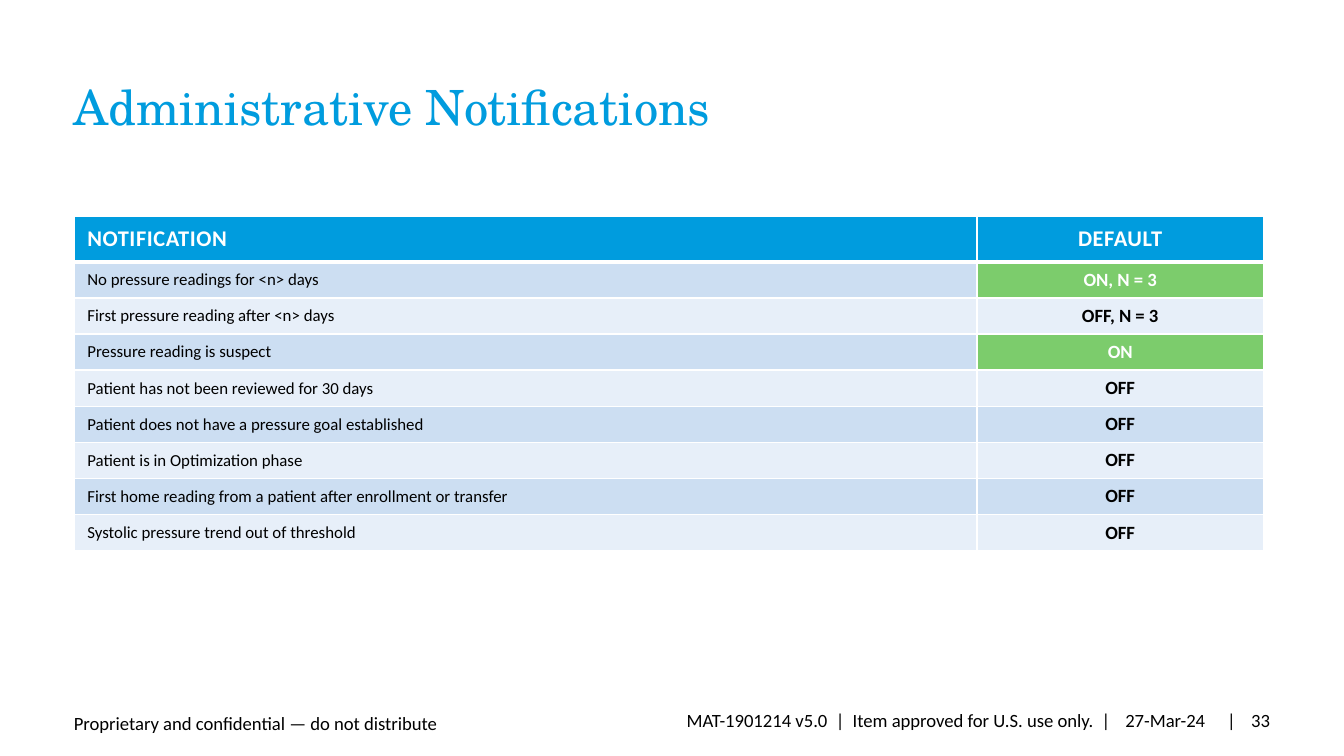
from lxml import etree
from pptx import Presentation
from pptx.dml.color import RGBColor
from pptx.enum.text import MSO_ANCHOR, PP_ALIGN
from pptx.oxml.ns import qn
from pptx.util import Inches, Pt

LEFT, CENTER, RIGHT = PP_ALIGN.LEFT, PP_ALIGN.CENTER, PP_ALIGN.RIGHT
TOP, MIDDLE, BOTTOM = MSO_ANCHOR.TOP, MSO_ANCHOR.MIDDLE, MSO_ANCHOR.BOTTOM
BODY_FONT, TITLE_FONT = "Calibri", "TeX Gyre Schola"
COLORS = {
    "blue": "009CDE",
    "green": "7CCC6C",
    "band_dark": "CCDEF2",
    "band_light": "E7EFF9",
    "white": "FFFFFF",
    "black": "000000",
}


def style_text(frame, text, size, color, align=LEFT, bold=False, font=BODY_FONT):
    paragraph = frame.paragraphs[0]
    paragraph.text = text
    paragraph.alignment = align
    for run in paragraph.runs:
        run.font.name = font
        run.font.size = Pt(size)
        run.font.bold = bold
        run.font.color.rgb = RGBColor.from_string(COLORS[color])
    return paragraph


def add_text(box, text, size, color, align, anchor, insets, font=BODY_FONT):
    frame = slide.shapes.add_textbox(*map(Inches, box)).text_frame
    frame.word_wrap = True
    frame.vertical_anchor = anchor
    (frame.margin_left, frame.margin_top,
     frame.margin_right, frame.margin_bottom) = map(Inches, insets)
    return style_text(frame, text, size, color, align, font=font)


# Widescreen 16:9 slide
prs = Presentation()
prs.slide_width = Inches(10)
prs.slide_height = Inches(10 * 9 / 16)
slide = prs.slides.add_slide(prs.slide_layouts[6])

# Title
title = add_text((0.55, 0.62, 8.9, 0.43), "Administrative Notifications", 26, "blue",
                 LEFT, TOP, (0, 0, 0.1, 0.05), TITLE_FONT)
title.line_spacing = 0.9

# Footer
add_text((0.55, 5.27, 3.34, 0.24), "Proprietary and confidential — do not distribute",
         10, "black", LEFT, BOTTOM, (0, 0.05, 0, 0.05))
add_text((3.99, 5.21, 4.3, 0.3),
         "MAT-1901214 v5.0  |  Item approved for U.S. use only.  |",
         10, "black", RIGHT, MIDDLE, (0.1, 0.05, 0.03, 0.05))
add_text((8.24, 5.21, 0.86, 0.3), "27-Mar-24",
         10, "black", CENTER, MIDDLE, (0.1, 0.05, 0.1, 0.05))
page_number = add_text((8.93, 5.21, 0.62, 0.3), "|\t33",
                       10, "black", LEFT, MIDDLE, (0.2, 0.05, 0, 0.05))
tab_stops = etree.SubElement(page_number._p.get_or_add_pPr(), qn("a:tabLst"))
etree.SubElement(tab_stops, qn("a:tab"), pos=str(Inches(0.18)), algn="l")

# Notification table
notifications = [
    ("NOTIFICATION", "DEFAULT"),
    ("No pressure readings for <n> days", "ON, N = 3"),
    ("First pressure reading after <n> days", "OFF, N = 3"),
    ("Pressure reading is suspect", "ON"),
    ("Patient has not been reviewed for 30 days", "OFF"),
    ("Patient does not have a pressure goal established", "OFF"),
    ("Patient is in Optimization phase", "OFF"),
    ("First home reading from a patient after enrollment or transfer", "OFF"),
    ("Systolic pressure trend out of threshold", "OFF"),
]
header_height, table_height = 0.34, 2.49
row_height = (table_height - header_height) / (len(notifications) - 1)
table = slide.shapes.add_table(len(notifications), 2, Inches(0.55), Inches(1.61),
                               Inches(8.85), Inches(table_height)).table
table.columns[0].width, table.columns[1].width = Inches(6.72), Inches(2.13)

for row, texts in enumerate(notifications):
    is_header = row == 0
    table.rows[row].height = Inches(header_height if is_header else row_height)
    for column, text in enumerate(texts):
        cell = table.cell(row, column)
        is_default = column == 1
        is_on = text.startswith("ON")
        cell.vertical_anchor = MIDDLE
        cell.margin_left = cell.margin_right = Inches(0.1)
        cell.margin_top = cell.margin_bottom = Inches(0.04 if is_header else 0.05)

        # White rules, thicker below the header
        widths = {"L": 1, "R": 1, "T": 3 if row == 1 else 1, "B": 3 if is_header else 1}
        properties = cell._tc.get_or_add_tcPr()
        for side, width in widths.items():
            rule = etree.SubElement(properties, qn(f"a:ln{side}"), w=str(Pt(width)))
            rule_fill = etree.SubElement(rule, qn("a:solidFill"))
            etree.SubElement(rule_fill, qn("a:srgbClr"), val=COLORS["white"])

        # Banded fill, green where the default is on
        if is_header:
            fill = "blue"
        elif is_on:
            fill = "green"
        else:
            fill = "band_dark" if row % 2 else "band_light"
        cell.fill.solid()
        cell.fill.fore_color.rgb = RGBColor.from_string(COLORS[fill])

        size = 12 if is_header else 10 if is_default else 9
        paragraph = style_text(cell.text_frame, text, size,
                               "white" if is_header or is_on else "black",
                               CENTER if is_default else LEFT,
                               bold=is_header or is_default)
        if is_header:
            paragraph.runs[0]._r.get_or_add_rPr().set("spc", "30")

prs.save("out.pptx")
